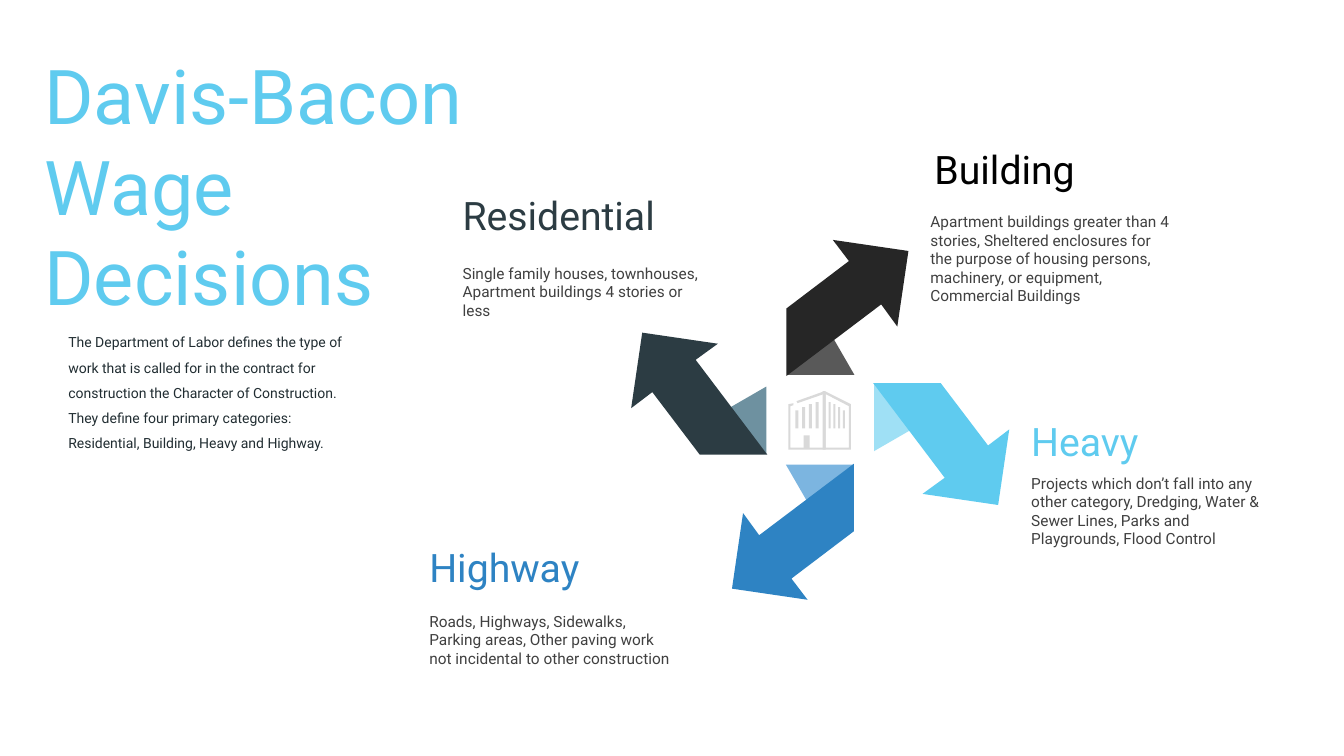
from pptx import Presentation
from pptx import util as u
from pptx.dml.color import RGBColor
from pptx.enum import shapes, text as t

COLUMNS, ROWS = 13.33, 7.5
BLACK = RGBColor(0x00, 0x00, 0x00)
CHARCOAL = RGBColor(0x26, 0x26, 0x26)
DARK_GRAY = RGBColor(0x59, 0x59, 0x59)
BODY_GRAY = RGBColor(0x40, 0x40, 0x40)
LIGHT_GRAY = RGBColor(0xD9, 0xD9, 0xD9)
INK = RGBColor(0x21, 0x2D, 0x32)
SKY = RGBColor(0x5F, 0xCB, 0xEF)
PALE_SKY = RGBColor(0x9F, 0xE0, 0xF5)
BLUE = RGBColor(0x2E, 0x83, 0xC3)
PALE_BLUE = RGBColor(0x7C, 0xB5, 0xE0)
SLATE = RGBColor(0x2C, 0x3C, 0x43)
PALE_SLATE = RGBColor(0x6E, 0x91, 0xA0)


def write(box, words, size, color, anchor=t.MSO_ANCHOR.TOP, spacing=1.0, font="Roboto"):
    frame = box.text_frame
    frame.word_wrap = True
    frame.auto_size = t.MSO_AUTO_SIZE.NONE
    frame.vertical_anchor = anchor
    para = frame.paragraphs[0]
    para.alignment = t.PP_ALIGN.LEFT
    para.line_spacing = spacing
    span = para.add_run()
    span.text = words
    span.font.size = u.Pt(size)
    span.font.name = font
    span.font.color.rgb = color


def quarter_turn(point, turns):
    x, y = point
    for _ in range(turns):
        x, y = -y, x
    return x, y


class Page:
    def __init__(self, deck):
        self.slide = deck.slides.add_slide(deck.slide_layouts[5])
        self.column = deck.slide_width / COLUMNS
        self.row = deck.slide_height / ROWS

    def cells(self, x, y):
        return round(x * self.column), round(y * self.row)

    def area(self, left, top, width, height):
        return *self.cells(left, top), *self.cells(width, height)

    def paint(self, shape, color):
        shape.shadow.inherit = False
        shape.fill.solid()
        shape.fill.fore_color.rgb = color
        shape.line.fill.background()

    def title(self, words, area, **style):
        box = self.slide.shapes.title
        box.left, box.top, box.width, box.height = self.area(*area)
        write(box, words, **style)

    def text(self, words, area, **style):
        write(self.slide.shapes.add_textbox(*self.area(*area)), words, **style)

    def preset(self, kind, area, color, rotation=0):
        shape = self.slide.shapes.add_shape(kind, *self.area(*area))
        shape.rotation = rotation
        self.paint(shape, color)

    def outline(self, contours, color):
        builder = None
        for contour in contours:
            first, *others = [self.cells(*point) for point in contour]
            if builder is None:
                builder = self.slide.shapes.build_freeform(*first)
            else:
                builder.move_to(*first)
            builder.add_line_segments(others, close=True)
        self.paint(builder.convert_to_shape(), color)


deck = Presentation()
deck.slide_width, deck.slide_height = u.Inches(COLUMNS), u.Inches(ROWS)
page = Page(deck)

page.title("Davis-Bacon Wage Decisions", (0.34, 0.35, 4.96, 2.97),
           size=54, color=SKY, anchor=t.MSO_ANCHOR.MIDDLE)
page.text("The Department of Labor defines the type of work that is called for in the "
          "contract for construction the Character of Construction. They define four "
          "primary categories: Residential, Building, Heavy and Highway.",
          (0.58, 3.18, 3.04, 1.33), size=10, color=INK, spacing=1.5)

ARROW = [(0, 0), (0.67, 0), (1.14, 0.62), (1.35, 0.46), (1.24, 1.21), (0.49, 1.1), (0.71, 0.94)]
FOLD_WIDTH, FOLD_HEIGHT = 0.67, 0.58
FOLD_CENTER = (0.3, 0.34)
ARROWS = [
    ((8.66, 3.8), SKY, PALE_SKY),
    ((8.47, 4.6), BLUE, PALE_BLUE),
    ((7.61, 4.51), SLATE, PALE_SLATE),
    ((7.8, 3.73), CHARCOAL, DARK_GRAY),
]
for turns, ((tail_x, tail_y), color, fold_color) in enumerate(ARROWS):
    x, y = quarter_turn(FOLD_CENTER, turns)
    page.preset(shapes.MSO_SHAPE.ISOSCELES_TRIANGLE,
                (tail_x + x - FOLD_WIDTH / 2, tail_y + y - FOLD_HEIGHT / 2,
                 FOLD_WIDTH, FOLD_HEIGHT), fold_color, rotation=(90 + 90 * turns) % 360)
    turned = [quarter_turn(point, turns) for point in ARROW]
    page.outline([[(tail_x + x, tail_y + y) for x, y in turned]], color)

CATEGORIES = [
    ("Building", BLACK, (9.17, 1.39), (9.13, 2.06),
     "Apartment buildings greater than 4 stories, Sheltered enclosures for the purpose of "
     "housing persons, machinery, or equipment, Commercial Buildings"),
    ("Heavy", SKY, (10.13, 4.09), (10.13, 4.65),
     "Projects which don’t fall into any other category, Dredging, Water & Sewer Lines, "
     "Parks and Playgrounds, Flood Control"),
    ("Residential", SLATE, (4.49, 1.85), (4.49, 2.57),
     "Single family houses, townhouses, Apartment buildings 4 stories or less"),
    ("Highway", BLUE, (4.16, 5.34), (4.16, 6.02),
     "Roads, Highways, Sidewalks, Parking areas, Other paving work not incidental to "
     "other construction"),
]
for name, color, heading_corner, detail_corner, detail in CATEGORIES:
    page.text(name, (*heading_corner, 2.8, 0.57), size=28, color=color,
              anchor=t.MSO_ANCHOR.MIDDLE)
    page.text(detail, (*detail_corner, 2.64, 1.03), size=11, color=BODY_GRAY)

RIGHT_WALL = [
    [(8.16, 3.88), (8.18, 3.88), (8.44, 4.01), (8.44, 4.46), (8.16, 4.46)],
    [(8.19, 3.91), (8.19, 4.44), (8.42, 4.44), (8.42, 4.03)],
]
LEFT_WALL = [[
    (8.19, 4.46), (7.82, 4.46), (7.82, 4.01), (7.87, 4), (7.87, 4.02), (7.84, 4.03),
    (7.84, 4.44), (8.17, 4.44), (8.17, 3.91), (7.91, 4), (7.9, 3.98), (8.18, 3.88), (8.19, 3.89),
]]
for wall in (RIGHT_WALL, LEFT_WALL):
    page.outline(wall, LIGHT_GRAY)

WINDOW_BOTTOM = 4.25
WINDOW_HEIGHTS = [0.18, 0.21, 0.24, 0.26]
for start, step, width in ((7.89, 0.067, 0.03), (8.36, -0.047, 0.02)):
    for index, height in enumerate(WINDOW_HEIGHTS):
        page.preset(shapes.MSO_SHAPE.RECTANGLE,
                    (start + step * index, WINDOW_BOTTOM - height, width, height), LIGHT_GRAY)
page.preset(shapes.MSO_SHAPE.RECTANGLE, (7.97, 4.32, 0.06, 0.13), LIGHT_GRAY)

deck.save("out.pptx")
